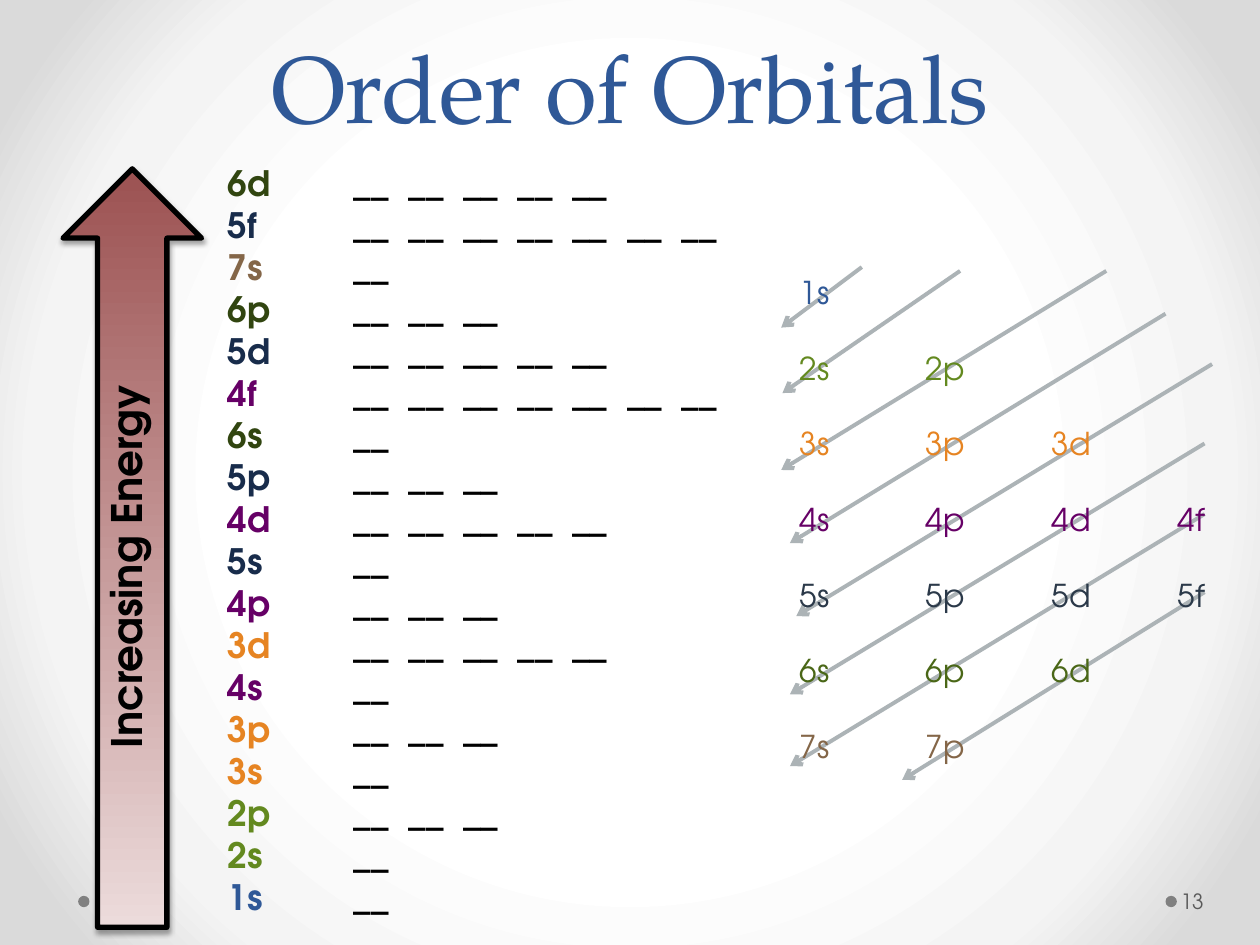
"""Build the Order of Orbitals slide: energy ladder and diagonal filling chart."""
from pptx import Presentation
from pptx.dml.color import RGBColor
from pptx.enum.shapes import MSO_CONNECTOR as Connector, MSO_SHAPE as Shape
from pptx.enum.text import MSO_ANCHOR as Anchor, PP_ALIGN as Align
from pptx.oxml import parse_xml
from pptx.oxml.ns import nsdecls
from pptx.util import Inches, Pt

TITLE = "Order of Orbitals"
AXIS = "Increasing Energy"
PAGE = "13"
LADDER = "6d 5f 7s 6p 5d 4f 6s 5p 4d 5s 4p 3d 4s 3p 3s 2p 2s 1s".split()
SLOTS = {"s": 1, "p": 3, "d": 5, "f": 7}
SHELLS = {"1": "s", "2": "sp", "3": "spd", "4": "spdf", "5": "spdf", "6": "spd", "7": "sp"}
DIAGONALS = [
    ((6.84, 2.12), (6.2, 2.6)),
    ((7.62, 2.15), (6.21, 3.12)),
    ((8.78, 2.15), (6.2, 3.73)),
    ((9.25, 2.49), (6.27, 4.31)),
    ((9.62, 2.89), (6.32, 4.89)),
    ((9.56, 3.52), (6.27, 5.51)),
    ((9.56, 4.08), (6.27, 6.08)),
    ((9.56, 4.7), (7.16, 6.19)),
]
COLORS = {
    "title": "2F5897", "black": "000000", "page": "595959", "dot": "808080",
    "diagonal": "ACB3B6", "arrow_tail": "ECDBDB", "arrow_head": "9C5252",
}
SHELL_COLORS = {
    "1": "2F5897", "2": "63891F", "3": "E68422", "4": "660066",
    "5": "182C4B", "6": "314510", "7": "846648",
}
CHART_COLORS = {**SHELL_COLORS, "5": "2B3949", "6": "4A6717"}
BACKGROUND = {50: "FFFFFF", 76: "F4F4F4", 92: "DADADA"}
SANS, SERIF = "TeX Gyre Adventor", "TeX Gyre Pagella"


def rgb(value):
    return RGBColor.from_string(value)


def set_background(s):
    stops = "".join(
        f'<a:gs pos="{pos * 1000}"><a:srgbClr val="{c}"/></a:gs>' for pos, c in BACKGROUND.items()
    )
    s.element.cSld.insert(0, parse_xml(
        f'<p:bg {nsdecls("p", "a")}><p:bgPr><a:gradFill rotWithShape="1"><a:gsLst>{stops}</a:gsLst>'
        '<a:path path="circle"><a:fillToRect l="50000" t="50000" r="50000" b="50000"/></a:path>'
        "</a:gradFill><a:effectLst/></p:bgPr></p:bg>"
    ))


def set_tabs(p, count):
    stops = "".join(f'<a:tab pos="{Inches(i + 1)}" algn="l"/>' for i in range(count))
    p._p.get_or_add_pPr().append(parse_xml(f'<a:tabLst {nsdecls("a")}>{stops}</a:tabLst>'))


def add_text(s, box, lines, size, font=SANS, bold=False, frame=None, para=None, gap=0, tabs=0):
    sp = s.shapes.add_textbox(*map(Inches, box))
    tf = sp.text_frame
    for name, value in {"word_wrap": True, **(frame or {})}.items():
        setattr(tf, name, value)
    for i, line in enumerate(lines):
        p = tf.add_paragraph() if i else tf.paragraphs[0]
        for name, value in {"space_before": Pt(gap if i else 0), **(para or {})}.items():
            setattr(p, name, value)
        if tabs:
            set_tabs(p, tabs)
        for text, color in line:
            r = p.add_run()
            r.text = text
            for name, value in {"name": font, "size": Pt(size), "bold": bold}.items():
                setattr(r.font, name, value)
            r.font.color.rgb = rgb(color)
    return sp


def add_dot(s, x):
    sp = s.shapes.add_shape(Shape.OVAL, *map(Inches, (x, 7.11, 0.09, 0.09)))
    sp.shadow.inherit = False
    sp.fill.solid()
    sp.fill.fore_color.rgb = rgb(COLORS["dot"])
    sp.line.fill.background()


def add_diagonal(s, start, end):
    line = s.shapes.add_connector(Connector.STRAIGHT, *map(Inches, start + end))
    line.line.color.rgb = rgb(COLORS["diagonal"])
    line.line.width = Pt(2.25)
    line.line._get_or_add_ln().append(parse_xml(f'<a:tailEnd {nsdecls("a")} type="arrow"/>'))
    line._element.spPr.append(parse_xml(f'<a:effectLst {nsdecls("a")}/>'))


def add_energy_arrow(s):
    sp = s.shapes.add_shape(Shape.RIGHT_ARROW, *map(Inches, (-1.96, 3.8, 6.02, 1.1)))
    sp.rotation = 270
    sp.fill.gradient()
    sp.fill.gradient_angle = 0
    for stop, name in zip(sp.fill.gradient_stops, ("arrow_tail", "arrow_head")):
        stop.color.rgb = rgb(COLORS[name])
    sp.line.color.rgb = rgb(COLORS["black"])
    sp.line.width = Pt(3)
    sp._element.spPr.append(parse_xml(
        f'<a:effectLst {nsdecls("a")}><a:outerShdw blurRad="{Pt(3.1)}" dist="{Pt(1.8)}" '
        'dir="5400000" rotWithShape="0"><a:srgbClr val="000000"><a:alpha val="35000"/>'
        "</a:srgbClr></a:outerShdw></a:effectLst>"
    ))


def main():
    prs = Presentation()
    prs.slide_width, prs.slide_height = Inches(10), Inches(7.5)
    s = prs.slides.add_slide(prs.slide_layouts[6])
    set_background(s)
    for x in (9.25, 0.62):
        add_dot(s, x)
    for start, end in DIAGONALS:
        add_diagonal(s, start, end)

    add_text(s, (0.5, 0.22, 9, 0.96), [[(TITLE, COLORS["title"])]], 54, SERIF,
             frame={"vertical_anchor": Anchor.BOTTOM},
             para={"alignment": Align.CENTER, "line_spacing": Pt(58)})

    ladder = [
        [(name, SHELL_COLORS[name[0]]),
         ("\t" + "  ".join(["__"] * SLOTS[name[1]]), COLORS["black"])]
        for name in LADDER
    ]
    add_text(s, (1.71, 1.23, 4.12, 6.16), ladder, 20, bold=True,
             frame={"word_wrap": False}, tabs=1)

    add_energy_arrow(s)
    label = add_text(s, (-0.56, 4.23, 3.12, 0.5), [[(AXIS, COLORS["black"])]], 24, bold=True,
                     frame={"word_wrap": False})
    label.rotation = 270

    add_text(s, (9.34, 6.95, 0.61, 0.4), [[(PAGE, COLORS["page"])]], 12,
             frame={"vertical_anchor": Anchor.MIDDLE, "margin_left": Inches(0.03),
                    "margin_right": Inches(0.05)})

    chart = [
        [("\t".join(shell + sub for sub in subs), CHART_COLORS[shell])]
        for shell, subs in SHELLS.items()
    ]
    add_text(s, (6.25, 2.12, 3.42, 4.04), chart, 18, gap=21.6, tabs=3)
    prs.save("out.pptx")


if __name__ == "__main__":
    main()
